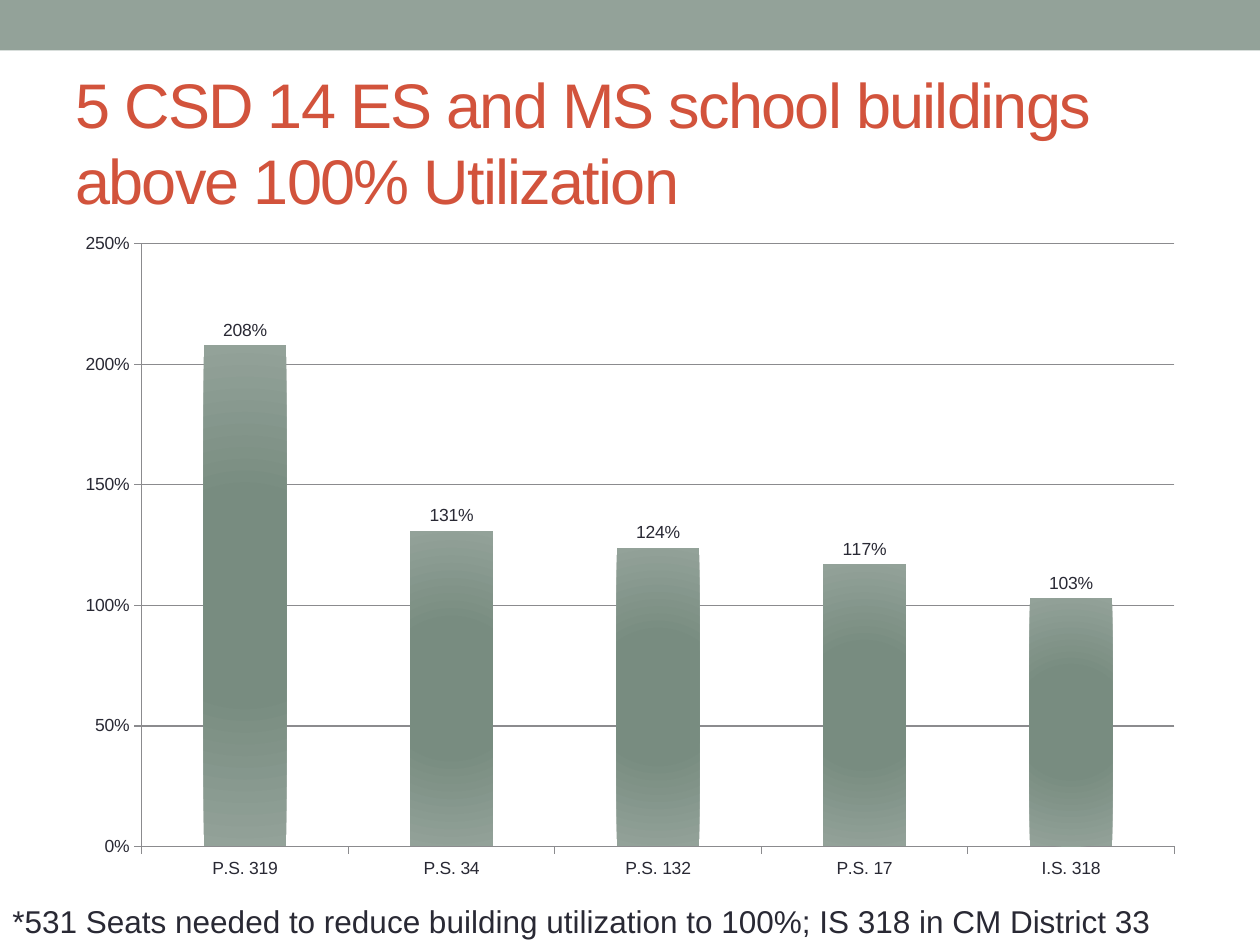
from lxml import etree
from pptx import Presentation
from pptx.chart.data import CategoryChartData
from pptx.dml.color import RGBColor
from pptx.enum.chart import XL_CHART_TYPE as ChartType
from pptx.enum.chart import XL_LABEL_POSITION as LabelPosition
from pptx.enum.chart import XL_TICK_MARK as TickMark
from pptx.enum.shapes import MSO_SHAPE as Shape
from pptx.enum.text import MSO_ANCHOR as Anchor
from pptx.oxml import parse_xml
from pptx.oxml.ns import qn
from pptx.util import Inches, Pt

FONT = "Arial"
COLORS = {
    "sage": "93A299",
    "deep_sage": "788C80",
    "title": "D2533C",
    "text": "292934",
    "axis": "8B8B8E",
}
UTILIZATION = {
    "P.S. 319": 2.08,
    "P.S. 34": 1.31,
    "P.S. 132": 1.24,
    "P.S. 17": 1.17,
    "I.S. 318": 1.03,
}
DRAWING_NS = "http://schemas.openxmlformats.org/drawingml/2006/main"


def rgb(name):
    return RGBColor.from_string(COLORS[name])


def box(left, top, width, height):
    return [Inches(length) for length in (left, top, width, height)]


def style_font(font, size, color):
    font.name = FONT
    font.size = Pt(size)
    font.color.rgb = rgb(color)


def add_band(slide, place):
    band = slide.shapes.add_shape(Shape.RECTANGLE, *place)
    band.shadow.inherit = False
    band.fill.solid()
    band.fill.fore_color.rgb = rgb("sage")
    band.line.fill.background()


def add_text(slide, place, words, size, color, wrap=True, anchor=Anchor.TOP, spacing=0):
    frame = slide.shapes.add_textbox(*place).text_frame
    frame.word_wrap = wrap
    frame.vertical_anchor = anchor
    run = frame.paragraphs[0].add_run()
    run.text = words
    style_font(run.font, size, color)
    if spacing:
        run.font._element.set("spc", str(spacing * 100))


def fill_radial(chart_format, center, edge):
    chart_format.fill.solid()
    solid = chart_format.fill._xPr.find(qn("a:solidFill"))
    gradient = parse_xml(
        f'<a:gradFill xmlns:a="{DRAWING_NS}" rotWithShape="1"><a:gsLst>'
        f'<a:gs pos="0"><a:srgbClr val="{COLORS[center]}"/></a:gs>'
        f'<a:gs pos="40000"><a:srgbClr val="{COLORS[center]}"/></a:gs>'
        f'<a:gs pos="100000"><a:srgbClr val="{COLORS[edge]}"/></a:gs>'
        '</a:gsLst><a:path path="circle">'
        '<a:fillToRect l="50000" t="50000" r="50000" b="50000"/>'
        "</a:path></a:gradFill>"
    )
    solid.getparent().replace(solid, gradient)


def style_line(line):
    line.color.rgb = rgb("axis")
    line.width = Pt(0.75)


def add_utilization_chart(slide, place):
    data = CategoryChartData(number_format="0%")
    data.categories = list(UTILIZATION)
    data.add_series("Series 1", list(UTILIZATION.values()))
    chart = slide.shapes.add_chart(ChartType.COLUMN_CLUSTERED, *place, data).chart
    chart.has_legend = False
    chart.has_title = False
    style_font(chart.font, 10, "text")

    for axis in (chart.category_axis, chart.value_axis):
        axis.major_tick_mark = TickMark.OUTSIDE
        axis.minor_tick_mark = TickMark.NONE
        style_line(axis.format.line)
    percent = chart.value_axis
    percent.minimum_scale, percent.maximum_scale, percent.major_unit = 0, 2.5, 0.5
    percent.tick_labels.number_format = "0%"
    percent.tick_labels.number_format_is_linked = False
    percent.has_major_gridlines = True
    style_line(percent.major_gridlines.format.line)

    columns = chart.plots[0]
    columns.gap_width = 150
    columns.vary_by_categories = False
    fill_radial(columns.series[0].format, "deep_sage", "sage")
    labels = columns.series[0].data_labels
    labels.show_value = True
    labels.number_format = "0%"
    labels.number_format_is_linked = False
    labels.position = LabelPosition.OUTSIDE_END
    style_font(labels.font, 10, "text")


def main():
    deck = Presentation()
    deck.slide_width, deck.slide_height = Inches(10), Inches(7.5)
    slide = deck.slides.add_slide(deck.slide_layouts[6])
    add_band(slide, box(0, 0, 10, 0.4))
    add_text(
        slide, box(0.5, 0.58, 9, 1.08),
        "5 CSD 14 ES and MS school buildings above 100% Utilization",
        36, "title", anchor=Anchor.MIDDLE, spacing=-1,
    )
    add_utilization_chart(slide, box(0.5, 1.75, 9, 5.33))
    add_text(
        slide, box(0, 7.11, 9.32, 0.4),
        "*531 Seats needed to reduce building utilization to 100%; IS 318 in CM District 33",
        18, "text", wrap=False,
    )
    deck.save("out.pptx")


if __name__ == "__main__":
    main()
